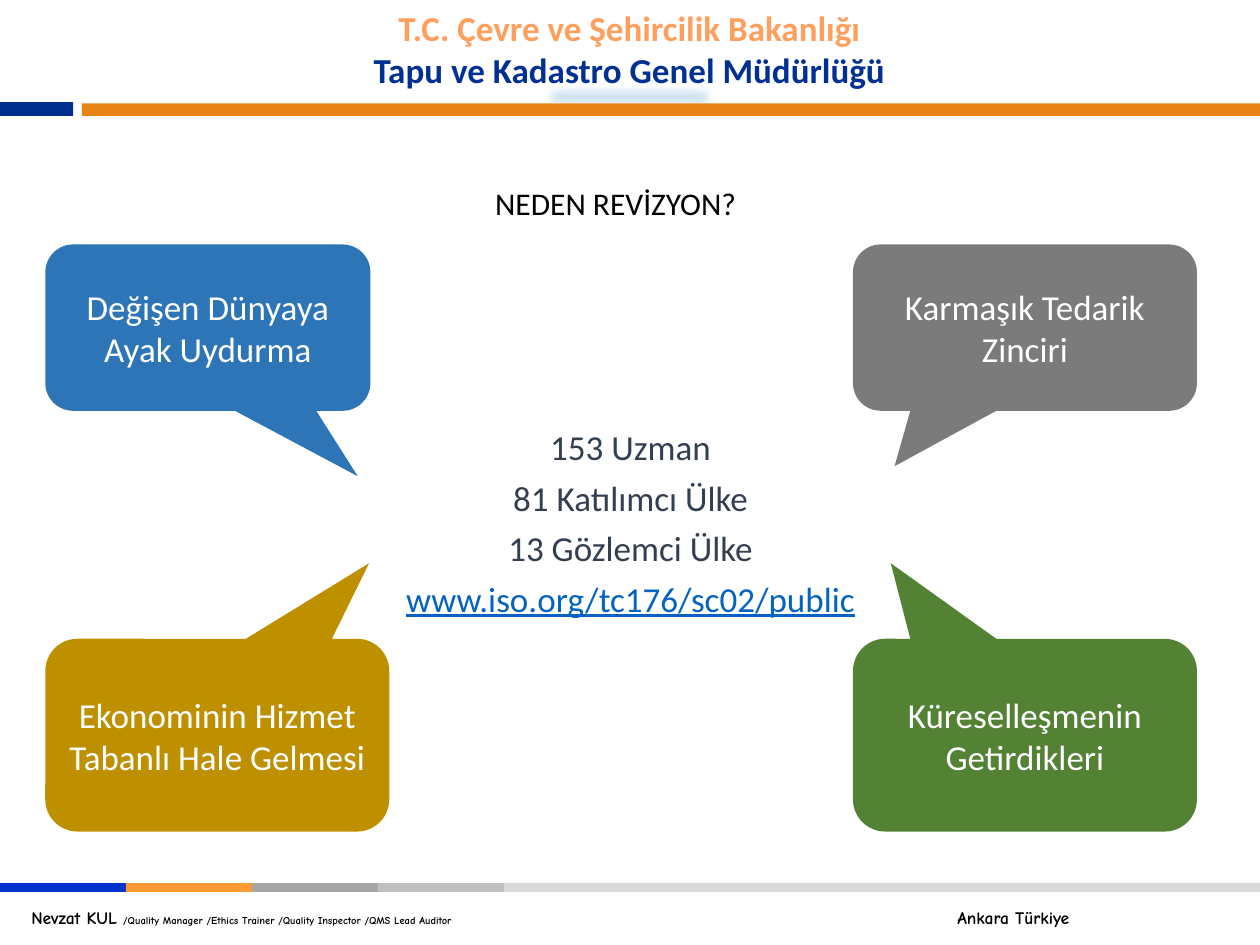
import pptx
import pptx.dml.color
import pptx.enum.shapes
import pptx.enum.text
import pptx.oxml
import pptx.oxml.ns
import pptx.util
from pptx.util import Inches

COLORS = {
    "navy": "002F8E", "orange": "E88416", "glow": "CFE3F4",
    "ministry": "FF9F5D", "directorate": "003192",
    "black": "000000", "white": "FFFFFF", "slate": "333E50", "link": "0462C1",
    "blue": "2D75B6", "gold": "BE9000", "gray": "7B7B7B", "green": "538235",
}
FOOTER_STRIPES = ["0033CC", "FF9933", "A6A6A6", "BFBFBF", "D9D9D9"]
SHAPES = pptx.enum.shapes.MSO_SHAPE
ALIGN = pptx.enum.text.PP_ALIGN
XMLNS = 'xmlns:a="http://schemas.openxmlformats.org/drawingml/2006/main"'


def rgb(value):
    return pptx.dml.color.RGBColor.from_string(value)


def set_font(font, name, size, color, bold=False):
    font.name = name
    font.size = pptx.util.Pt(size)
    font.color.rgb = rgb(color)
    font.bold = bold


def add_filled(slide, kind, left, top, width, height, color):
    shape = slide.shapes.add_shape(
        kind, Inches(left), Inches(top), Inches(width), Inches(height))
    shape.shadow.inherit = False
    shape.fill.solid()
    shape.fill.fore_color.rgb = rgb(color)
    shape.line.fill.background()
    return shape


def add_text_frame(slide, left, top, width, height, margin=0.0):
    box = slide.shapes.add_textbox(
        Inches(left), Inches(top), Inches(width), Inches(height))
    frame = box.text_frame
    frame.word_wrap = True
    frame.margin_left = frame.margin_right = Inches(margin)
    frame.margin_top = frame.margin_bottom = Inches(margin / 2)
    return frame


def add_header(slide, left, top, width):
    glow = add_filled(slide, SHAPES.RECTANGLE, left + 4.27, top + 0.62,
                      1.45, 0.3, COLORS["glow"])
    effects = glow._element.spPr.find(pptx.oxml.ns.qn("a:effectLst"))
    effects.append(pptx.oxml.parse_xml(
        f'<a:softEdge {XMLNS} rad="{Inches(0.08)}"/>'))
    add_filled(slide, SHAPES.RECTANGLE, left, top + 0.81, 0.58, 0.11,
               COLORS["navy"])
    add_filled(slide, SHAPES.RECTANGLE, left + 0.65, top + 0.82,
               width - 0.65, 0.1, COLORS["orange"])

    frame = add_text_frame(slide, left + 1.99, top, 6.01, 0.77, margin=0.1)
    frame.text = "T.C. Çevre ve Şehircilik Bakanlığı\nTapu ve Kadastro Genel Müdürlüğü"
    for line, color in zip(frame.paragraphs, ("ministry", "directorate")):
        line.alignment = ALIGN.CENTER
        set_font(line.font, "Calibri", 20, COLORS[color], bold=True)


def add_footer(slide, left, top, width):
    for index, color in enumerate(FOOTER_STRIPES):
        is_last = index == len(FOOTER_STRIPES) - 1
        stripe_width = width - index if is_last else 1.03
        add_filled(slide, SHAPES.RECTANGLE, left + index, top,
                   stripe_width, 0.07, color)

    frame = add_text_frame(slide, left + 0.15, top + 0.14, width - 0.15, 0.27,
                           margin=0.1)
    credits = frame.paragraphs[0]
    credits._p.get_or_add_pPr().append(pptx.oxml.parse_xml(
        f'<a:tabLst {XMLNS}><a:tab pos="{Inches(7.35)}" algn="l"/></a:tabLst>'))
    set_font(credits.font, "Comic Neue", 10, COLORS["black"], bold=True)
    for text, size in (
            ("Nevzat KUL ", 10),
            ("/Quality Manager /Ethics Trainer /Quality Inspector /QMS Lead Auditor", 6),
            ("\tAnkara Türkiye", 10)):
        part = credits.add_run()
        part.text = text
        set_font(part.font, "Comic Neue", size, COLORS["black"], bold=True)


def add_title(slide, left, top, width, height):
    frame = add_text_frame(slide, left, top, width, height)
    frame.text = "NEDEN REVİZYON?"
    set_font(frame.paragraphs[0].font, "Calibri", 18, COLORS["black"])


def add_participants(slide, left, top, width, height):
    frame = add_text_frame(slide, left, top, width, height)
    frame.text = "\n".join(["153 Uzman", "81 Katılımcı Ülke", "13 Gözlemci Ülke",
                            "www.iso.org/tc176/sc02/public"])
    for line in frame.paragraphs:
        line.alignment = ALIGN.CENTER
        set_font(line.font, "Calibri", 20, COLORS["slate"])
    for line in frame.paragraphs[1:]:
        line.space_before = pptx.util.Pt(4.8)
    address = frame.paragraphs[-1]
    address.font.color.rgb = rgb(COLORS["link"])
    address.font.underline = True


def add_reason(slide, left, top, width, height, tip, color, text):
    """Speech bubble whose tail ends at tip, an (x, y) offset from its corner."""
    bubble = add_filled(slide, SHAPES.ROUNDED_RECTANGULAR_CALLOUT,
                        left, top, width, height, color)
    bubble.adjustments[0] = tip[0] / width - 0.5
    bubble.adjustments[1] = tip[1] / height - 0.5
    frame = bubble.text_frame
    frame.word_wrap = True
    frame.vertical_anchor = pptx.enum.text.MSO_ANCHOR.MIDDLE
    frame.text = text
    reason = frame.paragraphs[0]
    reason.alignment = ALIGN.CENTER
    set_font(reason.font, "Calibri", 20, COLORS["white"])


def main():
    deck = pptx.Presentation()
    deck.slide_width, deck.slide_height = Inches(10), Inches(7.5)
    slide = deck.slides.add_slide(deck.slide_layouts[6])

    add_header(slide, 0, 0, 10)
    add_footer(slide, 0, 7.01, 10)
    add_title(slide, 3.93, 1.46, 5.76, 0.53)
    add_participants(slide, 3.21, 3.38, 3.59, 1.56)

    left, right = 0.36, 6.77
    upper, lower = 1.94, 5.07
    add_reason(slide, left, upper, 2.58, 1.32, (2.48, 1.84), COLORS["blue"],
               "Değişen Dünyaya\vAyak Uydurma")
    add_reason(slide, left, lower, 2.73, 1.53, (2.57, -0.6), COLORS["gold"],
               "Ekonominin Hizmet\vTabanlı Hale Gelmesi")
    add_reason(slide, right, upper, 2.73, 1.32, (0.33, 1.76), COLORS["gray"],
               "Karmaşık Tedarik\vZinciri")
    add_reason(slide, right, lower, 2.73, 1.53, (0.3, -0.6), COLORS["green"],
               "Küreselleşmenin\vGetirdikleri")

    deck.save("out.pptx")


if __name__ == "__main__":
    main()
